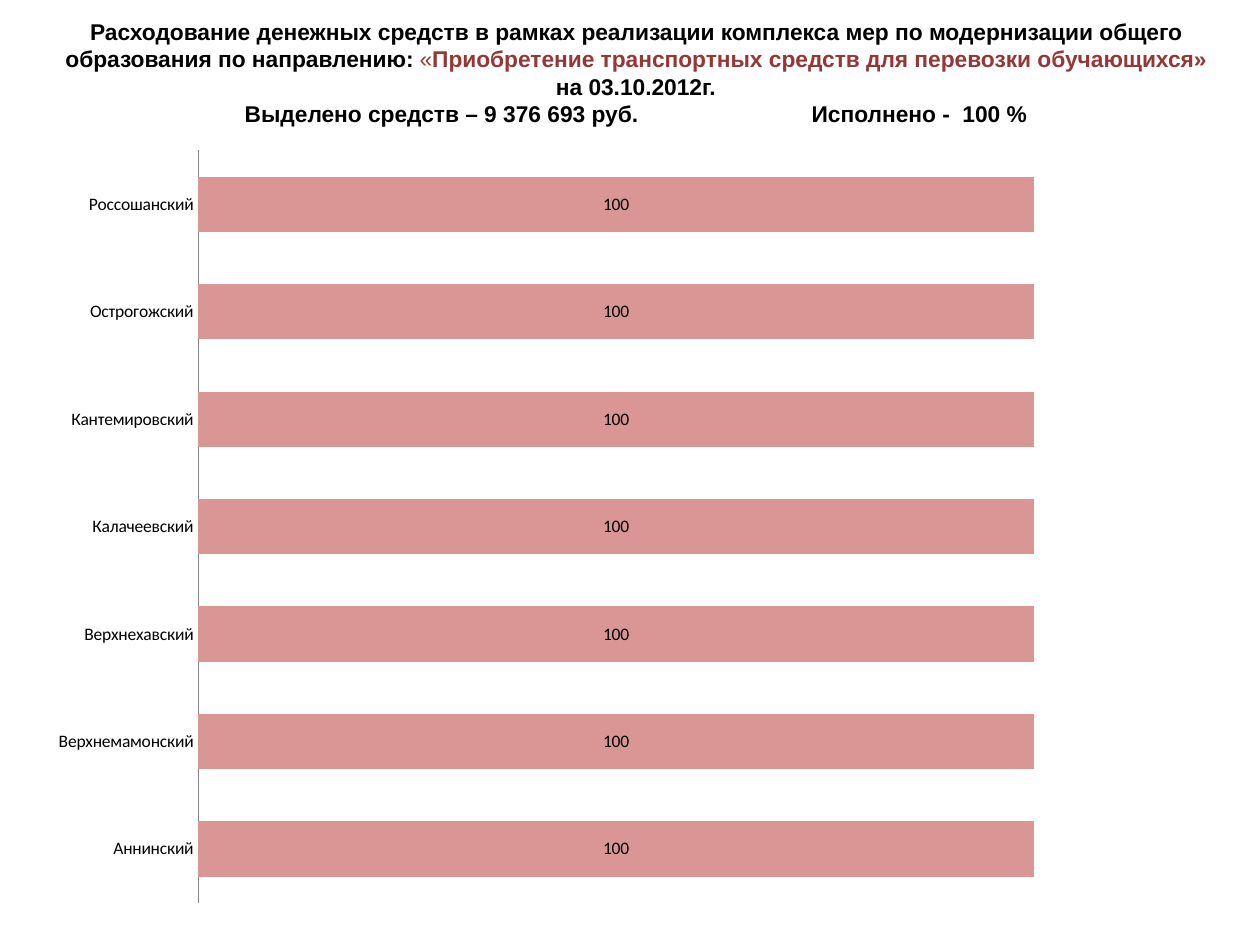
from lxml import etree
from pptx import Presentation
from pptx import util as u
from pptx.chart.data import CategoryChartData
from pptx.dml.color import RGBColor
from pptx.enum import chart as ch, text
from pptx.oxml import ns

COLORS = {"text": "000000", "accent": "953735", "bar": "D99694", "axis": "868686"}

presentation = Presentation()
presentation.slide_width = u.Inches(10)
presentation.slide_height = u.Inches(7.5)
slide = presentation.slides.add_slide(presentation.slide_layouts[6])

# Chart: share of funds spent by district
districts = ["Аннинский", "Верхнемамонский", "Верхнехавский", "Калачеевский",
             "Кантемировский", "Острогожский", "Россошанский"]
chart_data = CategoryChartData()
chart_data.categories = districts
chart_data.add_series("Series 1", [100] * len(districts))
chart = slide.shapes.add_chart(
    ch.XL_CHART_TYPE.BAR_STACKED, u.Inches(0.28), u.Inches(1.07),
    u.Inches(9.45), u.Inches(6.22), chart_data).chart
chart.has_legend = False
chart.has_title = False
chart.font.name = "Calibri"
chart.font.size = u.Pt(10)
chart.font.color.rgb = RGBColor.from_string(COLORS["text"])

# Bars and their labels
plot = chart.plots[0]
plot.gap_width = 95
plot.overlap = 100
plot.vary_by_categories = False
fill = plot.series[0].format.fill
fill.solid()
fill.fore_color.rgb = RGBColor.from_string(COLORS["bar"])
plot.has_data_labels = True
plot.data_labels.show_value = True
plot.data_labels.position = ch.XL_LABEL_POSITION.CENTER

# Axes
category_axis = chart.category_axis
category_axis.major_tick_mark = ch.XL_TICK_MARK.NONE
category_axis.format.line.color.rgb = RGBColor.from_string(COLORS["axis"])
category_axis.format.line.width = u.Pt(0.75)
value_axis = chart.value_axis
value_axis.minimum_scale = 0
value_axis.maximum_scale = 120
value_axis.has_major_gridlines = False
value_axis.visible = False

# Plot area position as fractions of the chart
plot_area = chart._chartSpace.chart.plotArea
for old_layout in plot_area.findall(ns.qn("c:layout")):
    plot_area.remove(old_layout)
layout = etree.Element(ns.qn("c:layout"))
manual = etree.SubElement(layout, ns.qn("c:manualLayout"))
for tag, value in [("layoutTarget", "inner"), ("xMode", "edge"), ("yMode", "edge"),
                   ("x", "0.137"), ("y", "0.02"), ("w", "0.842"), ("h", "0.96")]:
    etree.SubElement(manual, ns.qn(f"c:{tag}")).set("val", value)
plot_area.insert(0, layout)

# Heading: text, colour, bold, line break after
heading = [
    ("Расходование денежных средств в рамках реализации комплекса мер по модернизации "
     "общего образования по направлению: ", "text", True, False),
    ("«", "accent", False, False),
    ("Приобретение транспортных средств для перевозки обучающихся»", "accent", True, True),
    ("на 03.10.2012г.", "text", True, True),
    ("Выделено средств – 9 376 693 руб.\t\t\tИсполнено -  100 %", "text", True, False),
]
title = slide.shapes.add_textbox(u.Inches(0.2), u.Inches(0), u.Inches(9.69), u.Inches(1.15))
title.text_frame.word_wrap = True
title.text_frame.vertical_anchor = text.MSO_ANCHOR.MIDDLE
paragraph = title.text_frame.paragraphs[0]
paragraph.alignment = text.PP_ALIGN.CENTER
paragraph.line_spacing = u.Pt(15.6)
for words, color, bold, line_break in heading:
    run = paragraph.add_run()
    run.text = words
    run.font.name = "Arial"
    run.font.size = u.Pt(13)
    run.font.bold = bold
    run.font.color.rgb = RGBColor.from_string(COLORS[color])
    if line_break:
        paragraph.add_line_break()

presentation.save("out.pptx")
